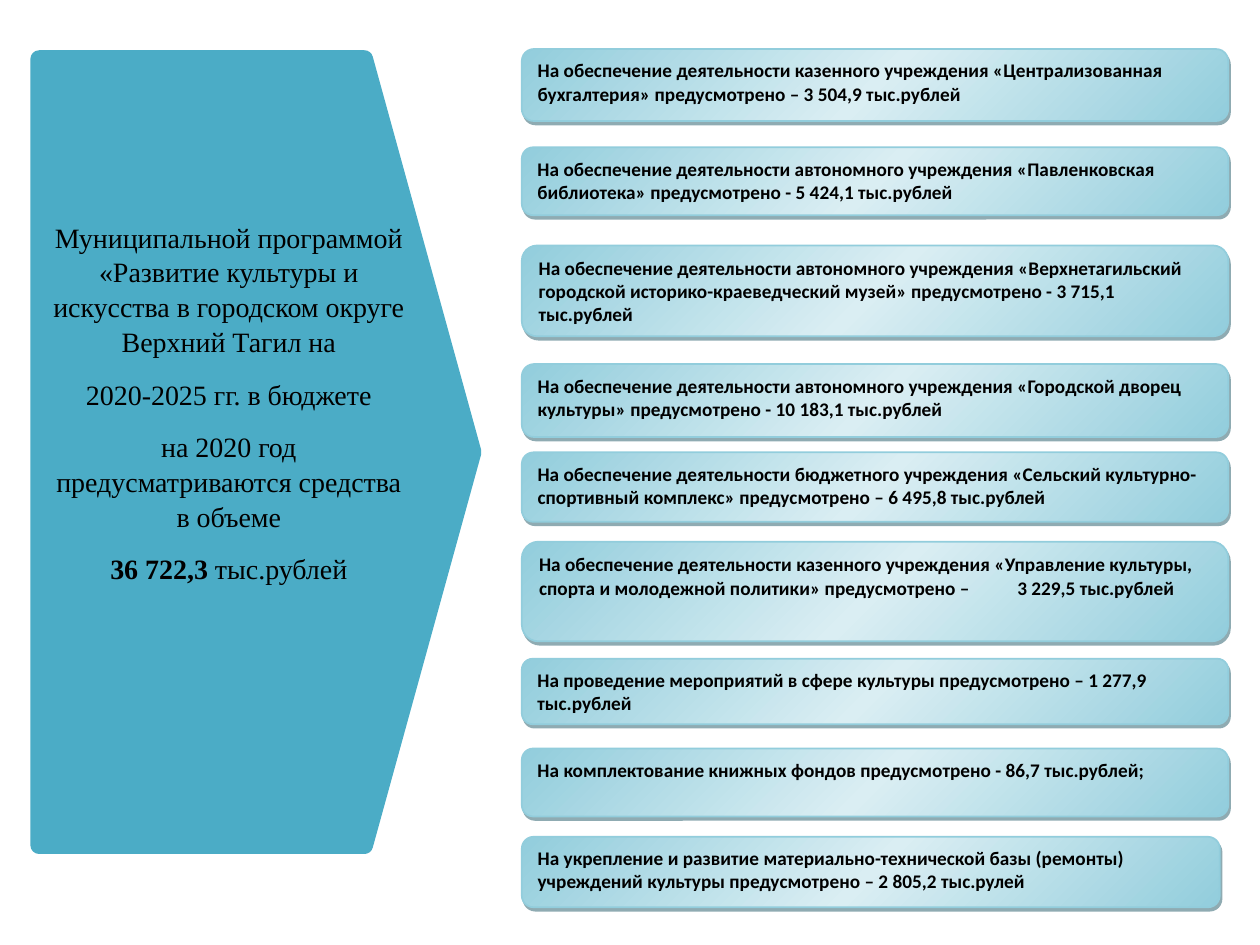
import copy

import lxml.etree
import pptx
import pptx.dml.color
import pptx.enum.shapes
import pptx.enum.text
import pptx.oxml
import pptx.oxml.ns
import pptx.util

Cm = pptx.util.Cm
Pt = pptx.util.Pt
RGBColor = pptx.dml.color.RGBColor
SHAPE = pptx.enum.shapes.MSO_SHAPE
ALIGN = pptx.enum.text.PP_ALIGN
ANCHOR = pptx.enum.text.MSO_ANCHOR
qn = pptx.oxml.ns.qn

TEAL = RGBColor(0x4B, 0xAC, 0xC6)
AQUA = RGBColor(0x92, 0xCD, 0xDC)
PALE = RGBColor(0xDA, 0xEE, 0xF3)
DARK_TEAL = RGBColor(0x20, 0x58, 0x67)
BLACK = RGBColor(0, 0, 0)

CARD_LEFT, CARD_WIDTH, LAST_CARD_WIDTH = 10.52, 14.24, 14.07
AMOUNT_TAB = 9.64

# Each paragraph is a list of (text, bold) runs.
PROGRAMME = [
    [("Муниципальной программой «Развитие культуры и искусства "
      "в городском округе Верхний Тагил на", False)],
    [("2020-2025 гг. в бюджете", False)],
    [("на 2020 год предусматриваются средства в объеме", False)],
    [("36 722,3 ", True), ("тыс.рублей", False)],
]

# Top and height in centimetres, then the wording.
CARDS = [
    (0.99, 1.45, "На обеспечение деятельности казенного учреждения «Централизованная "
                 "бухгалтерия» предусмотрено – 3 504,9 тыс.рублей"),
    (2.97, 1.37, "На обеспечение деятельности автономного учреждения «Павленковская "
                 "библиотека» предусмотрено - 5 424,1 тыс.рублей"),
    (4.95, 1.83, "На обеспечение деятельности автономного учреждения «Верхнетагильский "
                 "городской историко-краеведческий музей» предусмотрено - 3 715,1 тыс.рублей"),
    (7.34, 1.47, "На обеспечение деятельности автономного учреждения «Городской дворец "
                 "культуры» предусмотрено - 10 183,1 тыс.рублей"),
    (9.12, 1.40, "На обеспечение деятельности бюджетного учреждения «Сельский "
                 "культурно-спортивный комплекс» предусмотрено – 6 495,8 тыс.рублей"),
    (10.92, 2.01, "На обеспечение деятельности казенного учреждения «Управление культуры, "
                  "спорта и молодежной политики» предусмотрено –\t3 229,5 тыс.рублей"),
    (13.28, 1.32, "На проведение мероприятий в сфере культуры предусмотрено – "
                  "1 277,9 тыс.рублей"),
    (15.09, 1.37, "На комплектование книжных фондов предусмотрено - 86,7 тыс.рублей;"),
    (16.87, 1.42, "На укрепление и развитие материально-технической базы (ремонты) "
                  "учреждений культуры предусмотрено – 2 805,2 тыс.рулей"),
]


def add_box(s, kind, left, top, width, height, line, line_width):
    sp = s.shapes.add_shape(kind, Cm(left), Cm(top), Cm(width), Cm(height))
    sp.shadow.inherit = False
    sp.line.color.rgb = line
    sp.line.width = Pt(line_width)
    sp.text_frame.word_wrap = True
    sp.text_frame.vertical_anchor = ANCHOR.TOP
    return sp


def add_run(p, text, font, size, bold):
    r = p.add_run()
    r.text = text
    r.font.name = font
    r.font.size = Pt(size)
    r.font.bold = bold
    r.font.color.rgb = BLACK


def set_gradient(sp):
    """Fill diagonally from aqua through a pale middle back to aqua."""
    sp.fill.gradient()
    sp.fill.gradient_angle = 315
    stops = sp._element.spPr.find(qn("a:gradFill")).find(qn("a:gsLst"))
    stops.append(copy.deepcopy(stops[-1]))
    for stop, position, color in zip(sp.fill.gradient_stops, (0, 0.5, 1), (AQUA, PALE, AQUA)):
        stop.position = position
        stop.color.rgb = color


def add_shadow(sp):
    effects = sp._element.spPr.find(qn("a:effectLst"))
    shadow = lxml.etree.SubElement(
        effects, qn("a:outerShdw"), blurRad="0", dist=str(int(Pt(2.2))),
        dir=str(63 * 60000), algn="ctr", rotWithShape="0")
    color = lxml.etree.SubElement(shadow, qn("a:srgbClr"), val=str(DARK_TEAL))
    lxml.etree.SubElement(color, qn("a:alpha"), val="50000")


def add_tab_stop(p, position):
    tabs = lxml.etree.SubElement(p._p.get_or_add_pPr(), qn("a:tabLst"))
    lxml.etree.SubElement(tabs, qn("a:tab"), pos=str(int(Cm(position))), algn="l")


def add_programme_arrow(s):
    sp = add_box(s, SHAPE.PENTAGON, 0.79, 1.19, 8.74, 15.85, TEAL, 10)
    sp.adjustments[0] = 0.25
    sp.fill.solid()
    sp.fill.fore_color.rgb = TEAL
    tf = sp.text_frame
    tf.margin_top = Cm(3.22)
    for i, runs in enumerate(PROGRAMME):
        p = tf.add_paragraph() if i else tf.paragraphs[0]
        p.alignment = ALIGN.CENTER
        p.space_after = Pt(10)
        p.line_spacing = 1.04
        for text, bold in runs:
            add_run(p, text, "Times New Roman", 16, bold)


def add_card(s, top, height, width, text):
    sp = add_box(s, SHAPE.FLOWCHART_ALTERNATE_PROCESS, CARD_LEFT, top, width, height, AQUA, 1)
    set_gradient(sp)
    add_shadow(sp)
    p = sp.text_frame.paragraphs[0]
    if "\t" in text:
        add_tab_stop(p, AMOUNT_TAB)
    p.alignment = ALIGN.LEFT
    p.space_after = Pt(10)
    add_run(p, text, "Calibri", 11, True)


def main():
    prs = pptx.Presentation()
    prs.slide_width, prs.slide_height = Cm(25.4), Cm(19.05)
    s = prs.slides.add_slide(prs.slide_layouts[6])
    add_programme_arrow(s)
    for card in CARDS:
        top, height, text = card
        width = LAST_CARD_WIDTH if card is CARDS[-1] else CARD_WIDTH
        add_card(s, top, height, width, text)
    prs.save("out.pptx")


if __name__ == "__main__":
    main()
